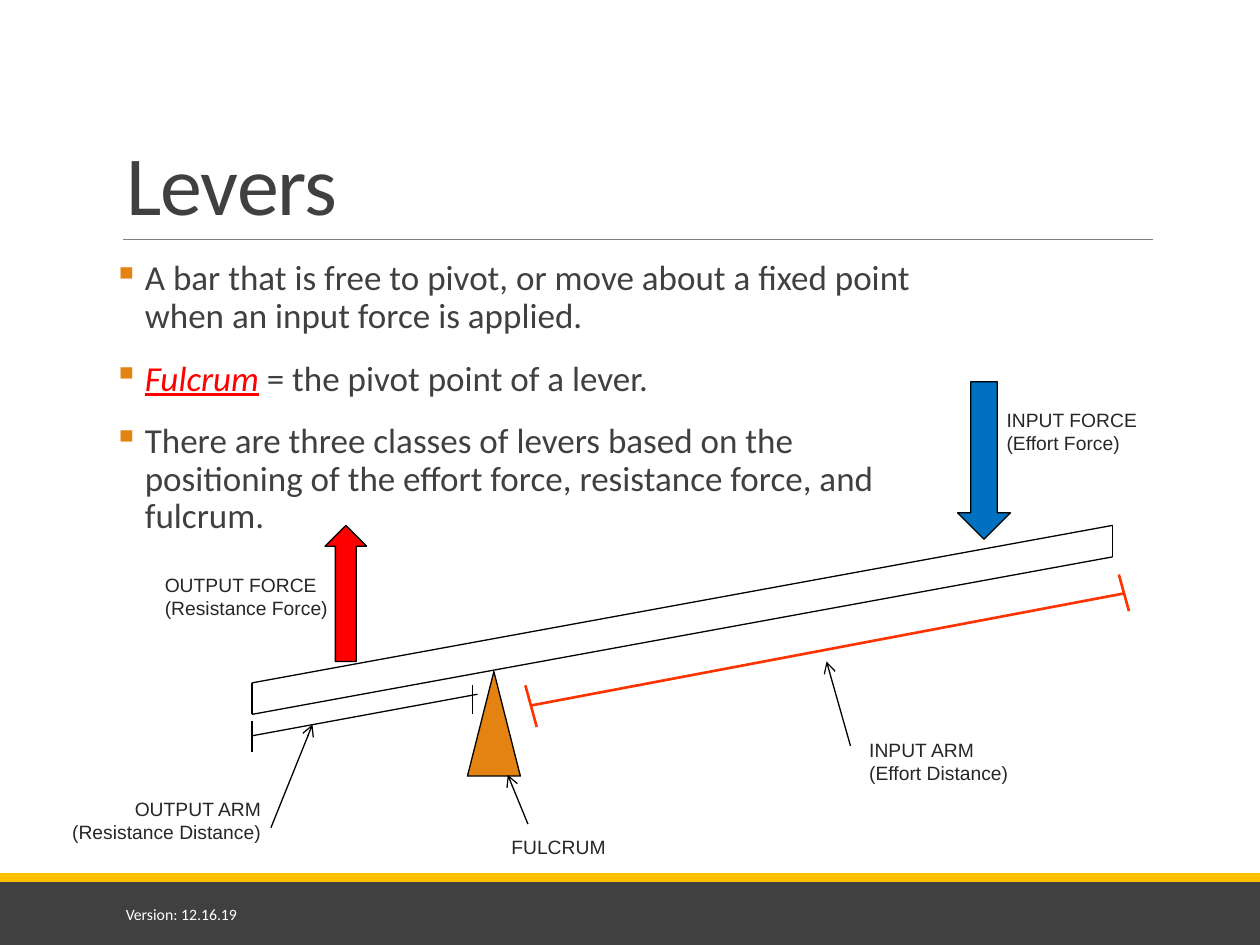
from pptx import Presentation
from pptx import util as u
from pptx.dml.color import RGBColor
from pptx.enum import shapes, text
from pptx.oxml.ns import qn
from lxml import etree

KIND = shapes.MSO_SHAPE
ALIGN = text.PP_ALIGN
ANCHOR = text.MSO_ANCHOR
BLACK, GRAY, RED, ORANGE = "000000", "404040", "FF0000", "E48312"


def color(code):
    return RGBColor.from_string(code)


class Deck:
    """Holds the style and the current slide, and draws each kind of element."""

    def __init__(self):
        self.file = Presentation()
        self.file.slide_width = u.Inches(10)
        self.file.slide_height = u.Inches(7.5)
        self.slide = self.file.slides.add_slide(self.file.slide_layouts[5])
        self.items = self.slide.shapes

    def style(self, font, size, code, name):
        font.name = name
        font.size = u.Pt(size)
        font.color.rgb = color(code)

    def title(self, words, *place):
        box = self.items.title
        box.left, box.top, box.width, box.height = map(u.Inches, place)
        frame = box.text_frame
        frame.auto_size = text.MSO_AUTO_SIZE.NONE
        frame.vertical_anchor = ANCHOR.BOTTOM
        para = frame.paragraphs[0]
        run = para.add_run()
        run.text = words
        run._r.get_or_add_rPr().set("spc", "-50")
        para.alignment = ALIGN.LEFT
        para.line_spacing = 0.85
        self.style(para.font, 48, GRAY, "Calibri")

    def box(self, *place):
        frame = self.items.add_textbox(*map(u.Inches, place)).text_frame
        frame.word_wrap = True
        return frame

    def label(self, lines, *place, align=ALIGN.LEFT, size=11, code="262626",
              name="Arial", anchor=ANCHOR.TOP):
        frame = self.box(*place)
        frame.vertical_anchor = anchor
        frame.text = lines
        for para in frame.paragraphs:
            para.alignment = align
            self.style(para.font, size, code, name)

    def bullets(self, points, *place):
        frame = self.box(*place)
        frame.margin_left = frame.margin_right = 0
        for num, (term, rest) in enumerate(points):
            para = frame.add_paragraph() if num else frame.paragraphs[0]
            para.line_spacing = 0.9
            para.space_before = u.Pt(12 if num else 0)
            para.space_after = u.Pt(2)
            props = para._p.get_or_add_pPr()
            props.set("marL", str(u.Inches(0.25)))
            props.set("indent", str(u.Inches(-0.25)))
            tint = etree.SubElement(props, qn("a:buClr"))
            etree.SubElement(tint, qn("a:srgbClr")).set("val", ORANGE)
            etree.SubElement(props, qn("a:buChar")).set("char", "▪")
            self.style(para.font, 20, GRAY, "Calibri")
            if term:
                run = para.add_run()
                run.text = term
                run.font.italic = run.font.underline = True
                run.font.color.rgb = color(RED)
            para.add_run().text = rest

    def shape(self, kind, fill, *place, edge=True):
        item = self.items.add_shape(kind, *map(u.Inches, place))
        item.shadow.inherit = False
        item.fill.solid()
        item.fill.fore_color.rgb = color(fill)
        if edge:
            item.line.color.rgb = color(BLACK)
            item.line.width = u.Pt(0.75)
        else:
            item.line.fill.background()

    def line(self, *ends, code=BLACK, width=0.75, arrow=False):
        item = self.items.add_connector(shapes.MSO_CONNECTOR.STRAIGHT, *map(u.Inches, ends))
        item.line.color.rgb = color(code)
        item.line.width = u.Pt(width)
        if arrow:
            etree.SubElement(item.line._get_or_add_ln(), qn("a:tailEnd")).set("type", "arrow")
        etree.SubElement(item._element.spPr, qn("a:effectLst"))


def main():
    deck = Deck()
    deck.shape(KIND.RECTANGLE, GRAY, 0, 7, 10, 0.5, edge=False)
    deck.shape(KIND.RECTANGLE, "FFC000", 0, 6.93, 10, 0.07, edge=False)
    deck.line(0.98, 1.9, 9.15, 1.9, code="808080", width=0.5)
    deck.title("Levers", 0.9, 0.31, 8.25, 1.59)
    deck.bullets([
        ("", "A bar that is free to pivot, or move about a fixed point "
             "when an input force is applied."),
        ("Fulcrum", " = the pivot point of a lever."),
        ("", "There are three classes of levers based on the positioning "
             "of the effort force, resistance force, and fulcrum."),
    ], 0.9, 2.02, 6.43, 4.4)

    left, right, low, high, thick = 2, 8.83, 5.42, 4.17, 0.25
    for drop in (0, thick):
        deck.line(left, low + drop, right, high + drop)
    for x, y in ((left, low), (right, high)):
        deck.line(x, y, x, y + thick)

    deck.shape(KIND.ISOSCELES_TRIANGLE, ORANGE, 3.71, 5.33, 0.42, 0.83)
    deck.shape(KIND.DOWN_ARROW, "0070C0", 7.6, 3.03, 0.42, 1.25)
    deck.shape(KIND.UP_ARROW, RED, 2.58, 4.17, 0.33, 1.08)

    for ends in ((4.17, 5.44, 4.26, 5.77), (8.88, 4.56, 8.96, 4.85), (4.21, 5.6, 8.92, 4.71)):
        deck.line(*ends, code="FF3300", width=1.5)
    for ends in ((2, 5.72, 2, 5.97), (3.75, 5.44, 3.75, 5.67), (2, 5.84, 3.79, 5.51)):
        deck.line(*ends)
    for ends in ((6.75, 5.92, 6.56, 5.25), (2.15, 6.57, 2.48, 5.75), (4.19, 6.54, 4.03, 6.15)):
        deck.line(*ends, arrow=True)

    deck.label("INPUT FORCE (Effort Force)", 7.89, 3.19, 1.58, 0.47)
    deck.label("OUTPUT FORCE (Resistance Force)", 1.21, 4.5, 1.76, 0.47)
    deck.label("INPUT ARM\n(Effort Distance)", 6.8, 5.81, 2.29, 0.47)
    deck.label("OUTPUT ARM (Resistance Distance)", 0.25, 6.28, 1.92, 0.47, align=ALIGN.RIGHT)
    deck.label("FULCRUM", 3.96, 6.58, 2.04, 0.29)
    deck.label("Version: 12.16.19", 0.9, 7.06, 2.03, 0.4, size=9, code="FFFFFF",
               name="Calibri", anchor=ANCHOR.MIDDLE)
    deck.file.save("out.pptx")


if __name__ == "__main__":
    main()
